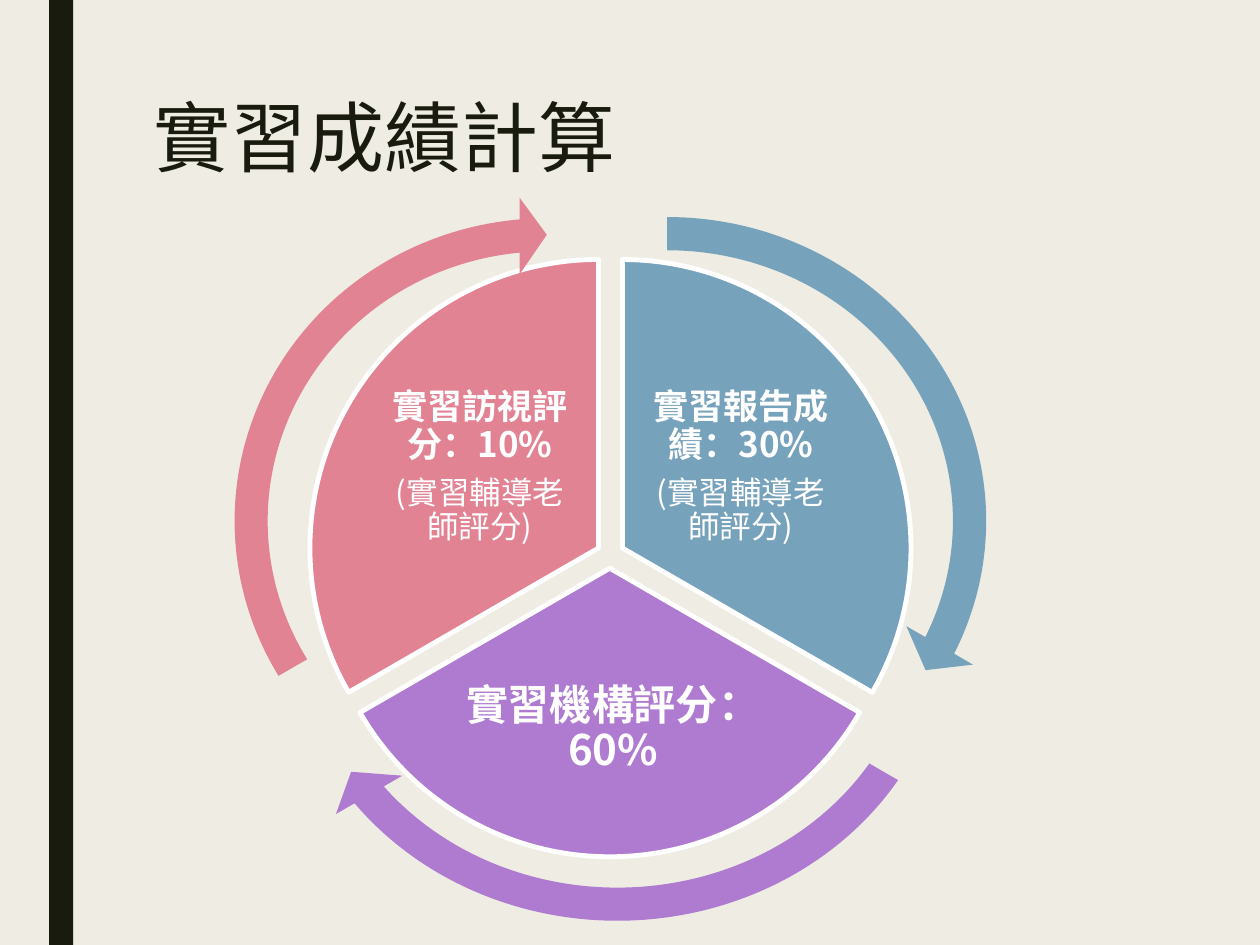
from pptx import Presentation
from pptx.dml.color import RGBColor
from pptx.enum.shapes import MSO_SHAPE
from pptx.enum.text import MSO_ANCHOR, PP_ALIGN
from pptx.oxml.ns import qn
from pptx.util import Inches, Pt
from lxml import etree

PAPER = RGBColor(0xEF, 0xED, 0xE3)
INK = RGBColor(0x19, 0x1B, 0x0E)
WHITE = RGBColor(0xFF, 0xFF, 0xFF)
BLUE = RGBColor(0x77, 0xA2, 0xBB)
PURPLE = RGBColor(0xAE, 0x7B, 0xD0)
PINK = RGBColor(0xE2, 0x83, 0x94)
SANS = "Noto Sans CJK SC"
SIZE = 4.58
TUTOR = "(實習輔導老師評分)"


def add_text(slide, box, lines, font=SANS, color=WHITE, align=PP_ALIGN.CENTER,
             anchor=MSO_ANCHOR.MIDDLE, inset=(0.03, 0.03), gap=0.35, lead=0.9):
    frame = slide.shapes.add_textbox(*map(Inches, box)).text_frame
    frame.word_wrap = True
    frame.vertical_anchor = anchor
    frame.margin_left = frame.margin_right = Inches(inset[0])
    frame.margin_top = frame.margin_bottom = Inches(inset[1])
    for i, (text, size, bold) in enumerate(lines):
        para = frame.add_paragraph() if i else frame.paragraphs[0]
        para.alignment = align
        para.line_spacing = lead
        para.space_after = Pt(round(size * gap))
        run = para.add_run()
        run.text = text
        run.font.name = font
        run.font.size = Pt(size)
        run.font.bold = bold
        run.font.color.rgb = color
        east = etree.SubElement(run.font._element, qn("a:ea"))
        east.set("typeface", SANS)


def add_form(slide, kind, box, fill, turns=(), line=None):
    form = slide.shapes.add_shape(kind, *map(Inches, box))
    form.shadow.inherit = False
    form.fill.solid()
    form.fill.fore_color.rgb = fill
    if line:
        form.line.color.rgb = line
        form.line.width = Pt(2.75)
    else:
        form.line.fill.background()
    for i, turn in enumerate(turns):
        form.adjustments[i] = turn


def add_frame(slide, box):
    left, top, width, height = box
    slide.background.fill.solid()
    slide.background.fill.fore_color.rgb = PAPER
    add_form(slide, MSO_SHAPE.RECTANGLE, (left + 0.39, top, 0.19, height), INK)
    add_text(slide, (left + 1.12, top + 0.75, width - 2.12, 1.62),
             [("實習成績計算", 44, False)], font="Karla", color=INK,
             align=PP_ALIGN.LEFT, anchor=MSO_ANCHOR.TOP, inset=(0.1, 0.05),
             gap=0, lead=0.89)


def add_cycle(slide, box):
    left, top = box[:2]
    parts = [
        (BLUE, (0.96, 0.51), (162, 18), (3.37, 1.48, 1.64, 1.36),
         [("實習報告成績：30%", 20, True), (TUTOR, 18, False)],
         (0.9, 0, 5.41, 5.17), (14.725, 161.994)),
        (PURPLE, (0.86, 0.67), (18, 90), (1.95, 3.64, 2.45, 1.2),
         [("實習機構評分：60%", 24, True)],
         (0.4, 0.78, 5.62, 5.15), (86.72, 18.005)),
        (PINK, (0.77, 0.51), (90, 162), (1.3, 1.48, 1.64, 1.36),
         [("實習訪視評分：10%", 20, True), (TUTOR, 18, False)],
         (0, 0.01, 5.3, 5.15), (158.73, 90)),
    ]

    def place(x, y, *size):
        return (left + x, top + y, *size)

    for fill, spot, turns, label, lines, _, _ in parts:
        add_form(slide, MSO_SHAPE.PIE, place(*spot, SIZE, SIZE), fill, turns, WHITE)
        add_text(slide, place(*label), lines)
    for fill, _, _, _, _, arc, ends in parts:
        add_form(slide, MSO_SHAPE.CIRCULAR_ARROW, place(*arc), fill,
                 (0.051, 3.275, *ends, 0.059))


def main():
    deck = Presentation()
    deck.slide_width = Inches(10)
    deck.slide_height = Inches(7.5)
    slide = deck.slides.add_slide(deck.slide_layouts[6])
    add_frame(slide, (0, 0, 10, 7.5))
    add_cycle(slide, (1.69, 1.55, 6.31, 5.93))
    deck.save("out.pptx")


if __name__ == "__main__":
    main()
